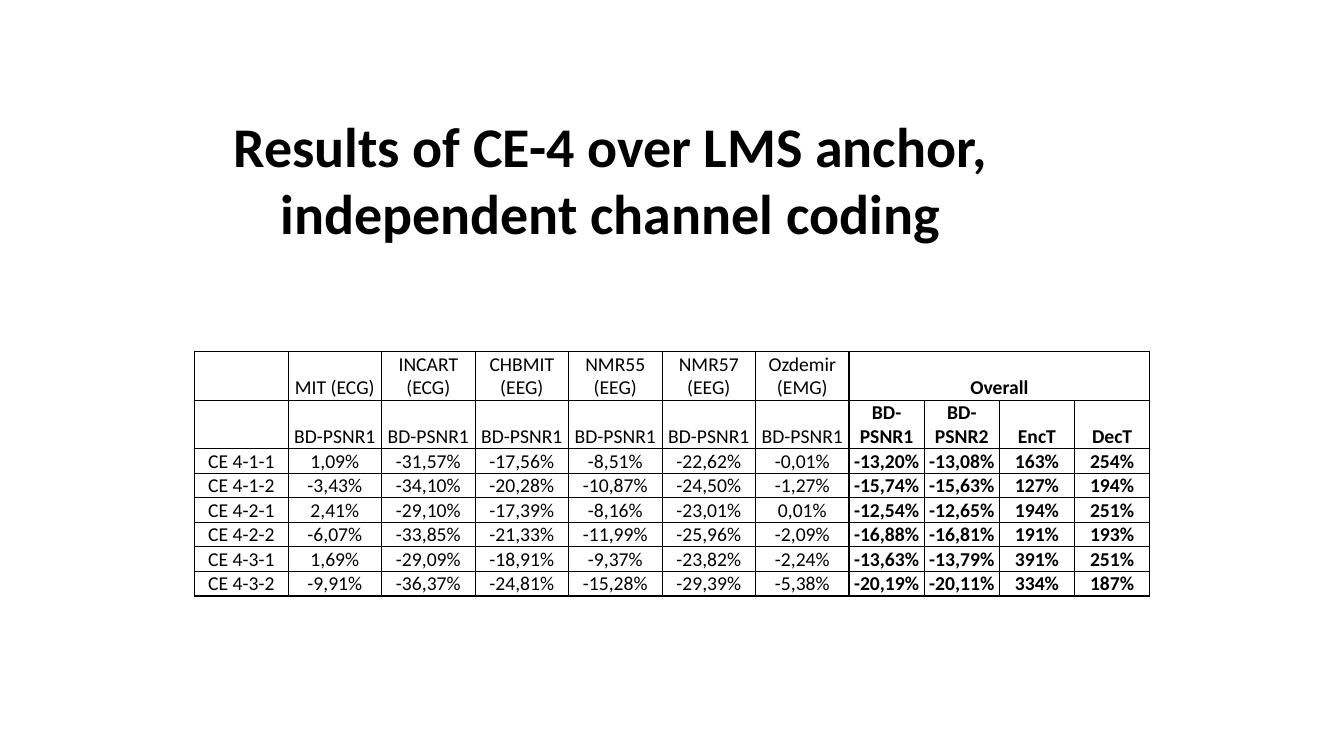
from pptx import Presentation, util as u
from pptx.dml.color import RGBColor
from pptx.enum import text as t
from pptx.oxml import parse_xml
from pptx.oxml.ns import nsdecls

INK = "000000"
DATA = ["MIT (ECG)", "INCART (ECG)", "CHBMIT (EEG)", "NMR55 (EEG)", "NMR57 (EEG)", "Ozdemir (EMG)"]
SIDE = len(DATA) + 1
HEAD = [
    ["", *DATA, "Overall", "", "", ""],
    ["", *["BD-PSNR1"] * len(DATA), "BD-PSNR1", "BD-PSNR2", "EncT", "DecT"],
]
BODY = """
CE 4-1-1|1,09%|-31,57%|-17,56%|-8,51%|-22,62%|-0,01%|-13,20%|-13,08%|163%|254%
CE 4-1-2|-3,43%|-34,10%|-20,28%|-10,87%|-24,50%|-1,27%|-15,74%|-15,63%|127%|194%
CE 4-2-1|2,41%|-29,10%|-17,39%|-8,16%|-23,01%|0,01%|-12,54%|-12,65%|194%|251%
CE 4-2-2|-6,07%|-33,85%|-21,33%|-11,99%|-25,96%|-2,09%|-16,88%|-16,81%|191%|193%
CE 4-3-1|1,69%|-29,09%|-18,91%|-9,37%|-23,82%|-2,24%|-13,63%|-13,79%|391%|251%
CE 4-3-2|-9,91%|-36,37%|-24,81%|-15,28%|-29,39%|-5,38%|-20,19%|-20,11%|334%|187%
"""
ROWS = HEAD + [line.split("|") for line in BODY.strip().splitlines()]


def color(code):
    """Turn a hex string into a colour."""
    return RGBColor.from_string(code)


def put(frame, words, size=14, bold=False, ink=INK, font="Calibri"):
    """Write centred text into a text frame."""
    frame.word_wrap = True
    par = frame.paragraphs[0]
    par.alignment = t.PP_ALIGN.CENTER
    par.font.size = u.Pt(size)
    if words:
        run = par.add_run()
        run.text = words
        run.font.size, run.font.bold, run.font.name = u.Pt(size), bold, font
        run.font.color.rgb = color(ink)


def edge(cell, ink=INK, width=1):
    """Draw all four borders of a cell."""
    props = cell._tc.get_or_add_tcPr()
    for spot, side in enumerate(("lnL", "lnR", "lnT", "lnB")):
        props.insert(spot, parse_xml(
            f'<a:{side} {nsdecls("a")} w="{u.Pt(width)}"><a:solidFill>'
            f'<a:srgbClr val="{ink}"/></a:solidFill></a:{side}>'))


def title(slide, left, top, width, height):
    """Place the slide title in its box."""
    box = slide.shapes.add_textbox(*map(u.Pt, (left, top, width, height)))
    box.text_frame.vertical_anchor = t.MSO_ANCHOR.MIDDLE
    put(box.text_frame, "Results of CE-4 over LMS anchor, independent channel coding", size=40, bold=True)


def results(slide, left, top, wide=66.8, slim=53.7, line=17.4):
    """Place the results table from its top left corner."""
    cols = [wide if col < SIDE else slim for col in range(len(ROWS[0]))]
    highs = [line * 2 if row < len(HEAD) else line for row in range(len(ROWS))]
    box = map(u.Pt, (left, top, sum(cols), sum(highs)))
    grid = slide.shapes.add_table(len(ROWS), len(cols), *box).table
    grid.first_row = grid.horz_banding = False
    for col, width in zip(grid.columns, cols):
        col.width = u.Pt(width)
    for row, high in zip(grid.rows, highs):
        row.height = u.Pt(high)
    grid.cell(0, SIDE).merge(grid.cell(0, len(cols) - 1))
    for y, row in enumerate(ROWS):
        for x, words in enumerate(row):
            cell = grid.cell(y, x)
            cell.margin_left = cell.margin_right = cell.margin_top = u.Pt(0.7)
            cell.margin_bottom = 0
            cell.vertical_anchor = t.MSO_ANCHOR.BOTTOM
            cell.fill.background()
            edge(cell)
            put(cell.text_frame, words, bold=x >= SIDE)


def main():
    """Build and save the slide."""
    deck = Presentation()
    deck.slide_width, deck.slide_height = u.Pt(960), u.Pt(540)
    slide = deck.slides.add_slide(deck.slide_layouts[6])
    title(slide, 75.6, 75.6, 720.7, 104.4)
    results(slide, 139, 251)
    deck.save("out.pptx")


if __name__ == "__main__":
    main()
